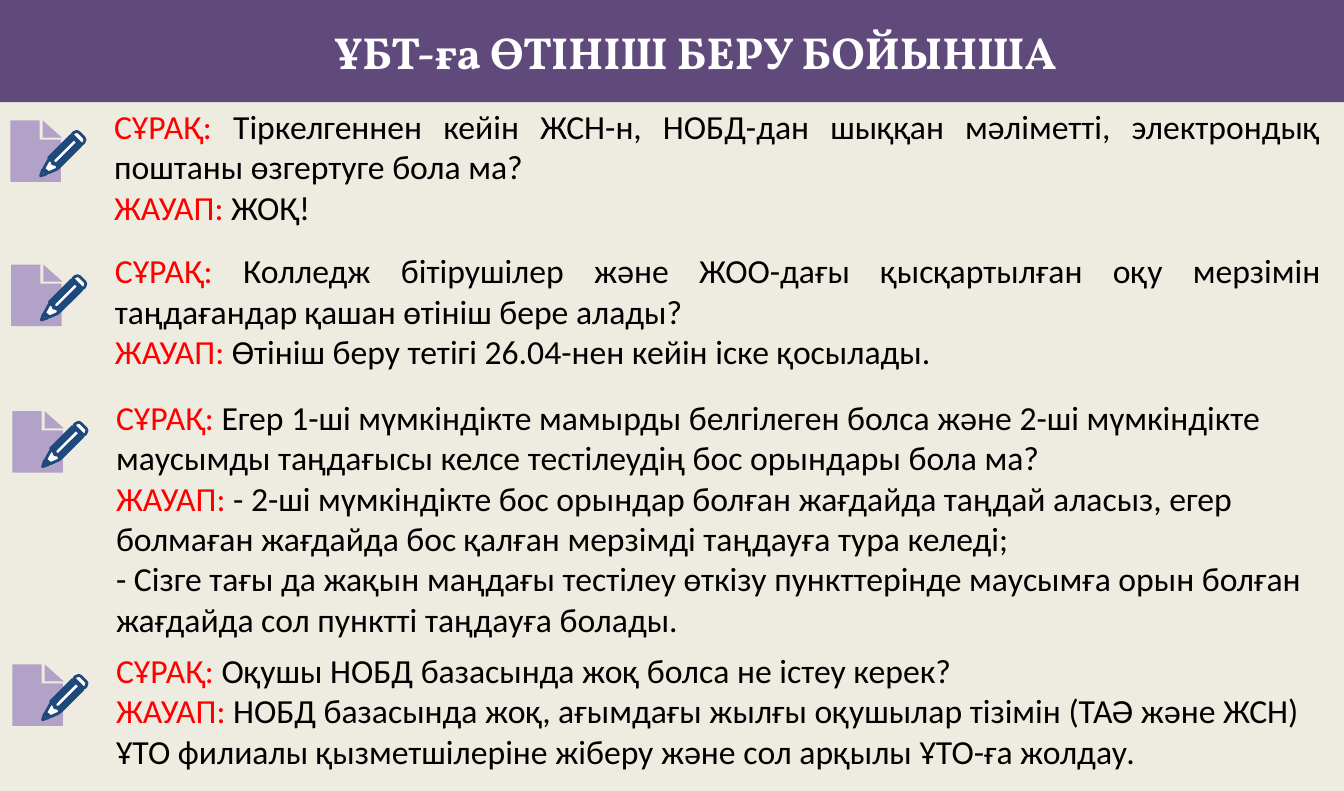
import pptx
import pptx.util
import pptx.dml.color
import pptx.enum.shapes
import pptx.enum.text

Cm = pptx.util.Cm
Pt = pptx.util.Pt
RGBColor = pptx.dml.color.RGBColor
ALIGN = pptx.enum.text.PP_ALIGN

PURPLE = RGBColor(0x60, 0x4A, 0x7B)
LILAC = RGBColor(0xB3, 0xA2, 0xC7)
NAVY = RGBColor(0x1F, 0x49, 0x7D)
CREAM = RGBColor(0xEE, 0xEC, 0xE1)
RED = RGBColor(0xFF, 0, 0)
BLACK = RGBColor(0, 0, 0)
WHITE = RGBColor(0xFF, 0xFF, 0xFF)

TITLE = "ҰБТ-ға ӨТІНІШ БЕРУ БОЙЫНША"
QUESTION, ANSWER = "СҰРАҚ: ", "ЖАУАП: "
ITEMS = [
    (2.62, 2.54, 3.33, ALIGN.JUSTIFY, [
        (QUESTION, "Тіркелгеннен кейін ЖСН-н, НОБД-дан шыққан мәліметті, "
                   "электрондық поштаны өзгертуге бола ма?"),
        (ANSWER, "ЖОҚ!"),
    ]),
    (2.64, 6.17, 3.33, ALIGN.JUSTIFY, [
        (QUESTION, "Колледж бітірушілер және ЖОО-дағы қысқартылған оқу мерзімін "
                   "таңдағандар қашан өтініш бере алады?"),
        (ANSWER, "Өтініш беру тетігі 26.04-нен кейін іске қосылады."),
    ]),
    (2.67, 9.86, 6.4, ALIGN.LEFT, [
        (QUESTION, "Егер 1-ші мүмкіндікте мамырды белгілеген болса және 2-ші мүмкіндікте "
                   "маусымды таңдағысы келсе тестілеудің бос орындары бола ма?"),
        (ANSWER, "- 2-ші мүмкіндікте бос орындар болған жағдайда таңдай аласыз, егер "
                 "болмаған жағдайда бос қалған мерзімді таңдауға тура келеді;"),
        ("", "- Сізге тағы да жақын маңдағы тестілеу өткізу пункттерінде маусымға орын "
             "болған жағдайда сол пунктті таңдауға болады."),
    ]),
    (2.67, 16.23, 3.33, ALIGN.LEFT, [
        (QUESTION, "Оқушы НОБД базасында жоқ болса не істеу керек?"),
        (ANSWER, "НОБД базасында жоқ, ағымдағы жылғы оқушылар тізімін (ТАӘ және ЖСН) "
                 "ҰТО филиалы қызметшілеріне жіберу және сол арқылы ҰТО-ға жолдау."),
    ]),
]

PAPER = [
    [(0, 0), (29, 0), (29, 19), (50, 19), (50, 61), (0, 61)],
    [(32, 0), (51, 17), (32, 17)],
]
PENCIL = [
    [(32, 49), (36, 53), (30, 55)],
    [(38, 39), (41, 40), (42, 43), (46, 44), (47, 48), (38, 52), (33, 48)],
    [(68, 23), (70, 25), (48, 47), (48, 43)],
    [(63, 18), (67, 22), (47, 42), (45, 43), (43, 42), (42, 40), (43, 38)],
    [(60, 15), (62, 17), (42, 37), (40, 38), (38, 37)],
    [(66, 11), (68, 12), (73, 17), (74, 19), (73, 22), (71, 24), (61, 14), (63, 12)],
]
ICON_UNIT = Cm(2.54) / 100
ICON_DX, ICON_DY = -2.36, 0.49
SLIDE_W, SLIDE_H, BAND_H, TEXT_W = 33.81, 19.91, 2.57, 30.84


def add_run(p, text, font, size, color, bold=False):
    r = p.add_run()
    r.text = text
    r.font.name = font
    r.font.size = Pt(size)
    r.font.bold = bold
    r.font.color.rgb = color


def paint(sp, fill, line=None):
    sp.shadow.inherit = False
    sp.fill.solid()
    sp.fill.fore_color.rgb = fill
    if line is None:
        sp.line.fill.background()
    else:
        sp.line.color.rgb = line
        sp.line.width = Pt(2)


def add_outline(shapes, contours, x, y, fill, line=None):
    first, *others = contours
    builder = shapes.build_freeform(*first[0], scale=ICON_UNIT)
    builder.add_line_segments(first[1:], close=True)
    for contour in others:
        builder.move_to(*contour[0])
        builder.add_line_segments(contour[1:], close=True)
    paint(builder.convert_to_shape(Cm(x), Cm(y)), fill, line)


def add_item(s, x, y, h, align, paragraphs):
    shapes = s.shapes.add_group_shape().shapes
    tf = shapes.add_textbox(Cm(x), Cm(y), Cm(TEXT_W), Cm(h)).text_frame
    tf.word_wrap = True
    tf.auto_size = pptx.enum.text.MSO_AUTO_SIZE.SHAPE_TO_FIT_TEXT
    for i, (label, text) in enumerate(paragraphs):
        p = tf.add_paragraph() if i else tf.paragraphs[0]
        p.alignment = align
        if label:
            add_run(p, label, "Calibri", 24, RED)
        add_run(p, text, "Calibri", 24, BLACK)
    add_outline(shapes, PAPER, x + ICON_DX, y + ICON_DY, LILAC)
    add_outline(shapes, PENCIL, x + ICON_DX, y + ICON_DY, WHITE, NAVY)


def main():
    prs = pptx.Presentation()
    prs.slide_width, prs.slide_height = Cm(SLIDE_W), Cm(SLIDE_H)
    s = prs.slides.add_slide(prs.slide_layouts[5])
    s.background.fill.solid()
    s.background.fill.fore_color.rgb = CREAM

    title = s.shapes.title
    band = s.shapes.add_shape(
        pptx.enum.shapes.MSO_SHAPE.RECTANGLE, 0, 0, Cm(SLIDE_W), Cm(BAND_H))
    paint(band, PURPLE)
    title.element.addprevious(band.element)

    title.left, title.top = Cm(4.7), Cm(0.48)
    title.width, title.height = Cm(25.6), Cm(1.63)
    tf = title.text_frame
    tf.word_wrap = True
    tf.auto_size = pptx.enum.text.MSO_AUTO_SIZE.NONE
    tf.vertical_anchor = pptx.enum.text.MSO_ANCHOR.MIDDLE
    tf.paragraphs[0].alignment = ALIGN.CENTER
    add_run(tf.paragraphs[0], TITLE, "Vollkorn", 32, WHITE, bold=True)

    for item in ITEMS:
        add_item(s, *item)
    prs.save("out.pptx")


if __name__ == "__main__":
    main()
